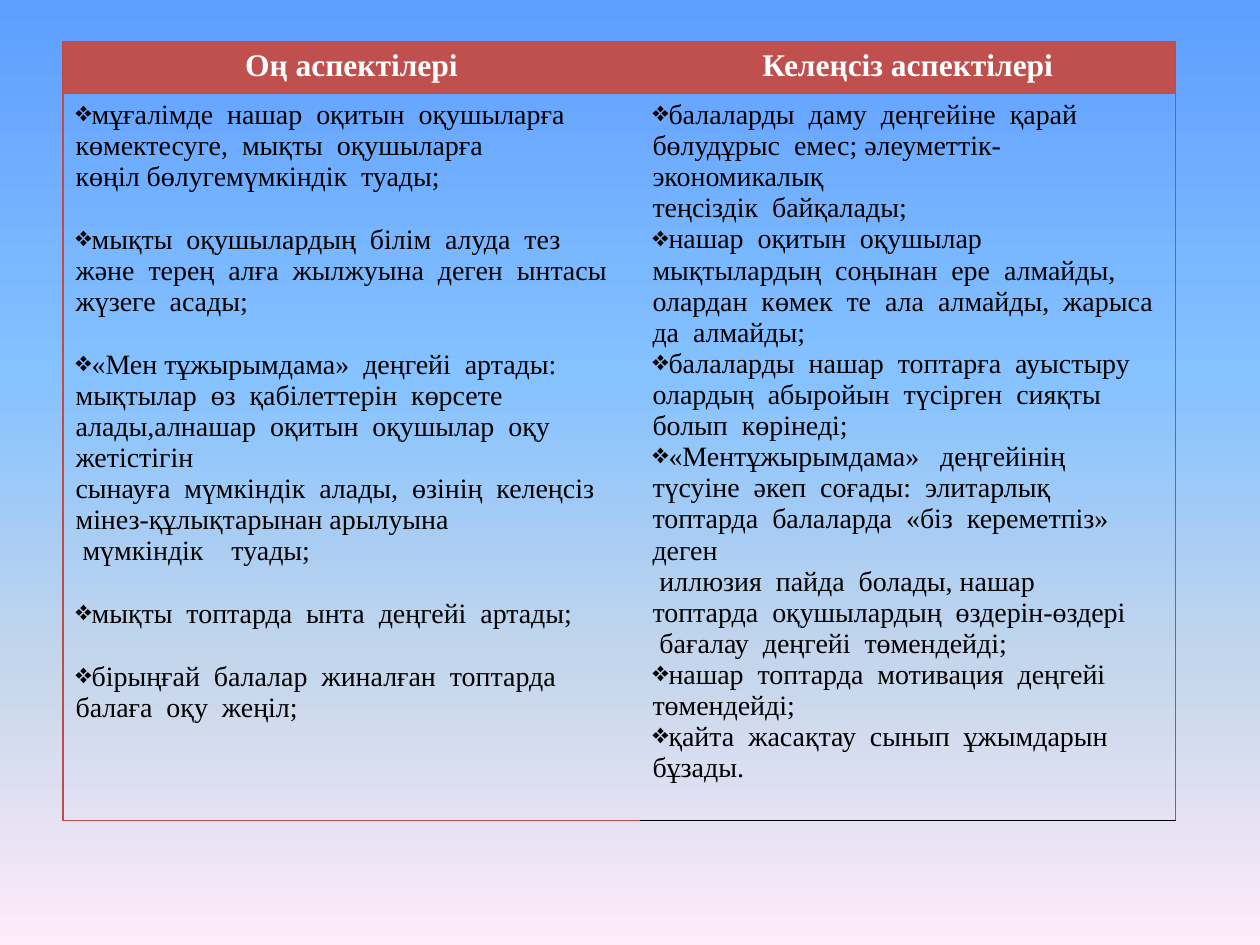
import copy

import pptx
import pptx.dml.color
import pptx.enum.text
import pptx.oxml
import pptx.oxml.ns
import pptx.util
from pptx.util import Cm

# In the texts a tilde is a no-break space and a double space is a wide gap.
# Each item lists its paragraphs; the first one carries the bullet.
COLUMNS = [
    {
        "title": "Оң аспектілері",
        "width": 11.63,
        "item_gap": 18,
        "borders": {"L": ("BF4C48", 0.75), "B": ("BF4C48", 0.75)},
        "items": [
            ["мұғалімде  нашар  оқитын  оқушыларға  көмектесуге,  мықты  оқушыларға  "
             "көңіл~бөлугемүмкіндік  туады;"],
            ["мықты  оқушылардың  білім  алуда  тез",
             "және  терең  алға  жылжуына  деген  ынтасы  жүзеге  асады;"],
            ["«Мен тұжырымдама»  деңгейі  артады:",
             "мықтылар  өз  қабілеттерін  көрсете  алады,алнашар  оқитын  оқушылар  "
             "оқу  жетістігін",
             "сынауға  мүмкіндік  алады,  өзінің  келеңсіз  мінез-құлықтарынан~арылуына",
             " мүмкіндік    туады;"],
            ["мықты  топтарда  ынта  деңгейі  артады;"],
            ["бірыңғай  балалар  жиналған  топтарда",
             "балаға  оқу  жеңіл;"],
        ],
    },
    {
        "title": "Келеңсіз аспектілері",
        "width": 10.8,
        "item_gap": 0,
        "borders": {"R": ("BF4C48", 0.75), "B": ("000000", 1)},
        "items": [
            ["балаларды  даму  деңгейіне  қарай  бөлудұрыс  емес; әлеуметтік-экономикалық",
             "теңсіздік  байқалады;"],
            ["нашар  оқитын  оқушылар мықтылардың  соңынан  ере  алмайды, олардан  "
             "көмек  те  ала  алмайды,  жарыса  да  алмайды;"],
            ["балаларды  нашар  топтарға  ауыстыру  олардың  абыройын  түсірген  сияқты  "
             "болып  көрінеді;"],
            ["«Ментұжырымдама» ~ деңгейінің  түсуіне  әкеп  соғады:  элитарлық  топтарда  "
             "балаларда  «біз  кереметпіз» деген",
             " иллюзия  пайда  болады,~нашар",
             "топтарда  оқушылардың  өздерін-өздері",
             " бағалау  деңгейі  төмендейді;"],
            ["нашар  топтарда  мотивация  деңгейі  төмендейді;"],
            ["қайта  жасақтау  сынып  ұжымдарын  бұзады."],
        ],
    },
]

THEME = {
    "font": "Times New Roman",
    "title_size": 18,
    "body_size": 16,
    "title_color": "FFFFFF",
    "body_color": "000000",
    "title_fill": "C0504D",
    "title_border": ("BF4C48", 0.75),
    "bullet": "❖",
    "background": [(0, "5E9EFF"), (0.4, "85C2FF"), (0.7, "C4D6EB"), (1, "FFEBFA")],
    "plain_table": "{2D5ABB26-0587-4C30-8999-92F81FD0307C}",
}
LEFT, TOP = 1.27, 0.84
ROW_HEIGHTS = [1.04, 14.66]


def rgb(value):
    return pptx.dml.color.RGBColor.from_string(value)


def paint_background(slide):
    fill = slide.background.fill
    fill.gradient()
    fill.gradient_angle = 270
    stop_list = slide.element.xpath(".//a:gsLst")[0]
    while len(stop_list) < len(THEME["background"]):
        stop_list.append(copy.deepcopy(stop_list[0]))
    for stop, (position, color) in zip(fill.gradient_stops, THEME["background"]):
        stop.position = position
        stop.color.rgb = rgb(color)


def set_borders(cell, borders):
    """Draw the given sides; borders maps L, R, T, B to (colour, points)."""
    sides = [side for side in "LRTB" if side in borders]
    properties = cell._tc.get_or_add_tcPr()
    for index, side in enumerate(sides):
        color, width = borders[side]
        properties.insert(index, pptx.oxml.parse_xml(
            f'<a:ln{side} {pptx.oxml.ns.nsdecls("a")} w="{pptx.util.Pt(width)}">'
            f'<a:solidFill><a:srgbClr val="{color}"/></a:solidFill></a:ln{side}>'))


def write_paragraph(paragraph, text, size, color, bold=False):
    paragraph.text = text.replace("  ", "~ ").replace("~", chr(160))
    for run in paragraph.runs:
        run.font.name = THEME["font"]
        run.font.size = pptx.util.Pt(size)
        run.font.bold = bold
        run.font.color.rgb = rgb(color)


def add_bullet(paragraph):
    properties = paragraph._p.get_or_add_pPr()
    properties.set("marL", "0")
    properties.set("indent", "0")
    properties.append(pptx.oxml.parse_xml(
        f'<a:buChar {pptx.oxml.ns.nsdecls("a")} char="{THEME["bullet"]}"/>'))


def fill_title_cell(cell, column):
    paragraph = cell.text_frame.paragraphs[0]
    write_paragraph(paragraph, column["title"], THEME["title_size"],
                    THEME["title_color"], bold=True)
    paragraph.alignment = pptx.enum.text.PP_ALIGN.CENTER
    cell.fill.solid()
    cell.fill.fore_color.rgb = rgb(THEME["title_fill"])
    outer_sides = {side: line for side, line in column["borders"].items() if side != "B"}
    set_borders(cell, {**outer_sides, "T": THEME["title_border"]})


def fill_body_cell(cell, column):
    frame = cell.text_frame
    for item_index, item in enumerate(column["items"]):
        for line_index, text in enumerate(item):
            first = item_index == line_index == 0
            paragraph = frame.paragraphs[0] if first else frame.add_paragraph()
            write_paragraph(paragraph, text, THEME["body_size"], THEME["body_color"])
            if line_index == 0:
                if item_index:
                    paragraph.space_before = pptx.util.Pt(column["item_gap"])
                add_bullet(paragraph)
    cell.fill.background()
    set_borders(cell, {**column["borders"], "T": THEME["title_border"]})


def main():
    presentation = pptx.Presentation()
    presentation.slide_width, presentation.slide_height = Cm(25.4), Cm(19.05)
    slide = presentation.slides.add_slide(presentation.slide_layouts[6])
    paint_background(slide)

    total_width = sum(column["width"] for column in COLUMNS)
    frame = slide.shapes.add_table(len(ROW_HEIGHTS), len(COLUMNS), Cm(LEFT), Cm(TOP),
                                   Cm(total_width), Cm(sum(ROW_HEIGHTS)))
    table = frame.table
    table._tbl.xpath(".//a:tableStyleId")[0].text = THEME["plain_table"]
    for row, height in zip(table.rows, ROW_HEIGHTS):
        row.height = Cm(height)
    for index, column in enumerate(COLUMNS):
        table.columns[index].width = Cm(column["width"])
        fill_title_cell(table.cell(0, index), column)
        fill_body_cell(table.cell(1, index), column)

    presentation.save("out.pptx")


if __name__ == "__main__":
    main()
